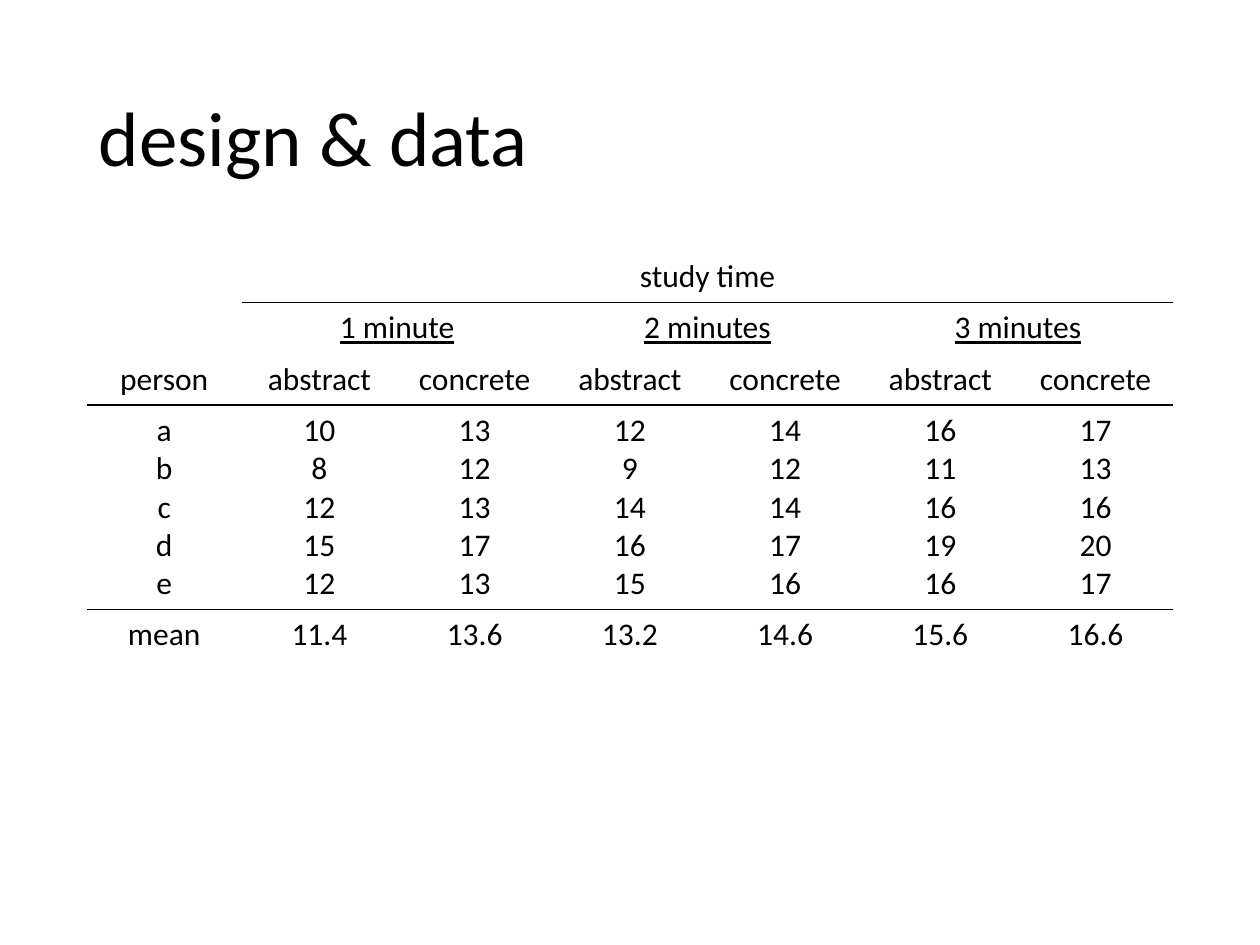
from lxml import etree
from pptx import Presentation
from pptx import util as u
from pptx.dml.color import RGBColor
from pptx.enum import text
from pptx.oxml import ns

BLACK = RGBColor(0, 0, 0)
FONT = "Calibri"
NO_GRID_STYLE = "{2D5ABB26-0587-4C30-8999-92F81FD0307C}"
PEOPLE = ["a", "b", "c", "d", "e"]
TIMES = ["1 minute", "2 minutes", "3 minutes"]
WORD_TYPES = ["abstract", "concrete"]
SCORES = [
    [10, 8, 12, 15, 12],
    [13, 12, 13, 17, 13],
    [12, 9, 14, 16, 15],
    [14, 12, 14, 17, 16],
    [16, 11, 16, 19, 16],
    [17, 13, 16, 20, 17],
]


def add_run(p, words, size, underline=None):
    """Add one run in the slide's font and colour."""
    r = p.add_run()
    r.text = words
    r.font.name = FONT
    r.font.size = u.Pt(size)
    r.font.color.rgb = BLACK
    r.font.underline = underline


def fill_cell(cell, lines, underline=None):
    """Write centred lines into a cell, one paragraph each."""
    tf = cell.text_frame
    for i, line in enumerate(lines):
        p = tf.add_paragraph() if i else tf.paragraphs[0]
        p.alignment = text.PP_ALIGN.CENTER
        add_run(p, line, 18, underline)


def rule_cell(cell, sides):
    """Draw one-point black rules on the given sides of a cell."""
    tc_pr = cell._tc.get_or_add_tcPr()
    for i, side in enumerate(sides):
        ln = etree.Element(ns.qn(f"a:ln{side}"), w=str(u.Pt(1)))
        fill = etree.SubElement(ln, ns.qn("a:solidFill"))
        etree.SubElement(fill, ns.qn("a:srgbClr"), val=str(BLACK))
        tc_pr.insert(i, ln)


def add_title(s, left, top, width, height):
    """Place the slide title in its box."""
    tf = s.shapes.add_textbox(u.Pt(left), u.Pt(top), u.Pt(width), u.Pt(height)).text_frame
    tf.word_wrap = True
    tf.vertical_anchor = text.MSO_ANCHOR.MIDDLE
    p = tf.paragraphs[0]
    p.line_spacing = 0.9
    add_run(p, "design & data", 44)


def add_scores(s, left, top, width, row_height, body_height):
    """Place the table of scores by study time and word type."""
    heights = [row_height] * 3 + [body_height, row_height]
    columns = 1 + len(SCORES)
    table = s.shapes.add_table(len(heights), columns, u.Pt(left), u.Pt(top),
                               u.Pt(width), u.Pt(sum(heights))).table
    table.first_row = table.horz_banding = False
    table._tbl.tblPr.find(ns.qn("a:tableStyleId")).text = NO_GRID_STYLE
    for row, height in zip(table.rows, heights):
        row.height = u.Pt(height)
    for column in table.columns:
        column.width = u.Pt(width / columns)

    table.cell(0, 1).merge(table.cell(0, columns - 1))
    fill_cell(table.cell(0, 1), ["study time"])
    for i, time in enumerate(TIMES):
        first = 1 + i * len(WORD_TYPES)
        table.cell(1, first).merge(table.cell(1, first + len(WORD_TYPES) - 1))
        fill_cell(table.cell(1, first), [time], underline=True)

    means = [f"{sum(scores) / len(scores):.1f}" for scores in SCORES]
    heads = ["person"] + WORD_TYPES * len(TIMES)
    bodies = [PEOPLE] + [[str(score) for score in scores] for scores in SCORES]
    for c, (head, body, mean) in enumerate(zip(heads, bodies, ["mean"] + means)):
        for row, lines in enumerate([[head], body, [mean]], start=2):
            fill_cell(table.cell(row, c), lines)
        if c:
            rule_cell(table.cell(0, c), "B")
        rule_cell(table.cell(2, c), "B")
        rule_cell(table.cell(3, c), "TB")
    for cell in table.iter_cells():
        cell.fill.background()


def main():
    """Build and save the slide."""
    prs = Presentation()
    prs.slide_width, prs.slide_height = u.Pt(720), u.Pt(540)
    s = prs.slides.add_slide(prs.slide_layouts[6])
    add_title(s, 49.5, 28.75, 621, 104.4)
    add_scores(s, 49.5, 143.75, 621, 29.2, 117)
    prs.save("out.pptx")


if __name__ == "__main__":
    main()
